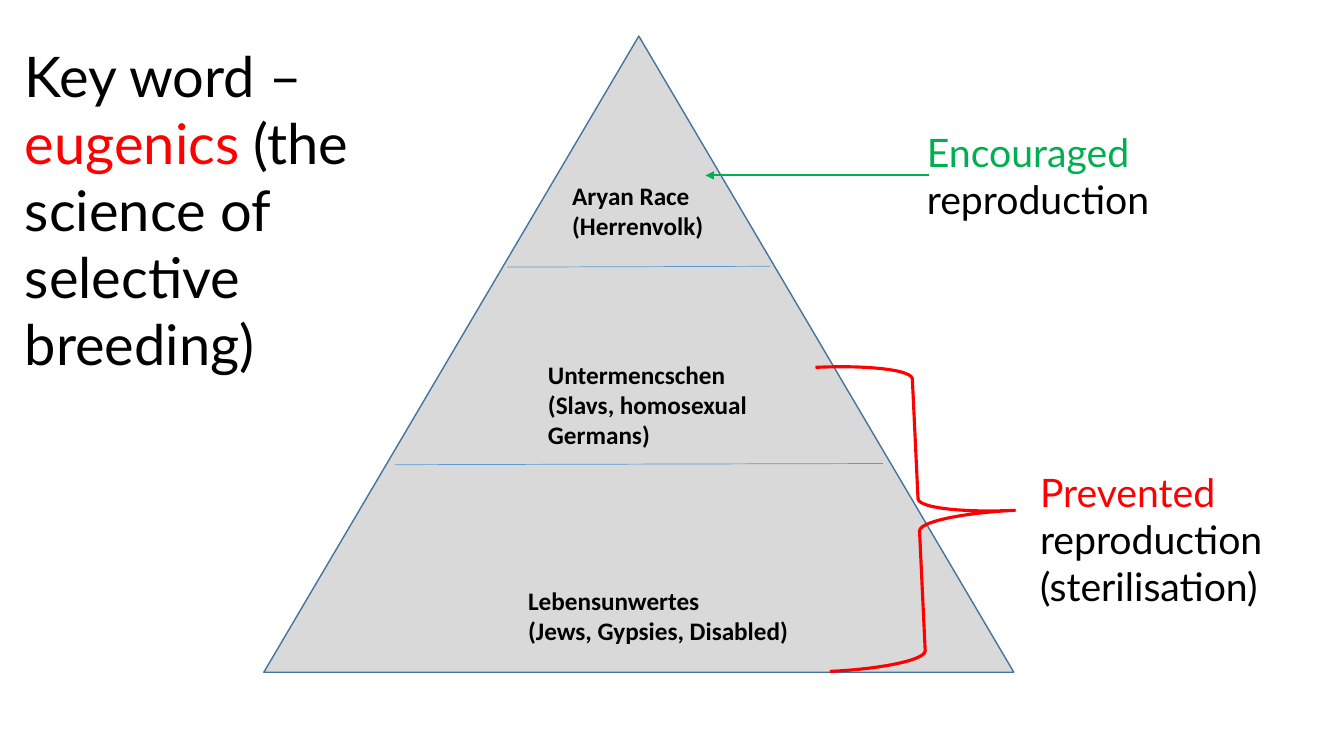
"""Build a slide with a three-tier pyramid, its labels and the key word eugenics."""
from typing import NamedTuple

from pptx import Presentation
from pptx import util as u
from pptx.dml.color import RGBColor
from pptx.enum import shapes, text
from pptx.oxml import parse_xml
from pptx.oxml.ns import nsdecls

BLACK, RED, GREEN = "000000", "FF0000", "00B050"
GREY, NAVY, BLUE = "D9D9D9", "43739E", "5B9BD5"


class Box(NamedTuple):
    left: float
    top: float
    width: float
    height: float


class Run(NamedTuple):
    words: str
    color: str = BLACK


class Label(NamedTuple):
    box: Box
    size: int
    paragraphs: list[list[Run]]
    font: str = "Lato"
    bold: bool = False


class Line(NamedTuple):
    start: tuple[float, float]
    end: tuple[float, float]
    color: str = BLUE
    width: float = 0.5
    arrow: bool = False


def tier(box: Box, name: str, members: str) -> Label:
    return Label(box, 18, [[Run(name)], [Run(members)]], "Calibri", True)


LABELS = [
    Label(Box(23.11, 3.1, 9.27, 2.64), 28,
          [[Run("Encouraged ", GREEN), Run("reproduction")]]),
    Label(Box(25.96, 11.68, 9.27, 3.84), 28,
          [[Run("Prevented ", RED), Run("reproduction")], [Run("(sterilisation)")]]),
    tier(Box(14.17, 4.42, 4.24, 1.8), "Aryan Race", "(Herrenvolk)"),
    tier(Box(13.56, 8.92, 6.99, 2.57), "Untermencschen", "(Slavs, homosexual Germans)"),
    tier(Box(13.06, 14.63, 7.42, 1.8), "Lebensunwertes", "(Jews, Gypsies, Disabled)"),
    Label(Box(0.38, 0.91, 11.25, 5.38), 40,
          [[Run("Key word – "), Run("eugenics", RED),
            Run(" (the science of selective breeding)")]]),
]

LINES = [
    Line((12.78, 6.73), (19.41, 6.71)),
    Line((9.96, 11.71), (22.25, 11.68)),
    Line((23.42, 4.42), (17.78, 4.42), GREEN, 1.5, True),
]


def rgb(color: str) -> RGBColor:
    return RGBColor.from_string(color)


def add_outline(slide, kind, box: Box, color: str, width: float):
    shape = slide.shapes.add_shape(kind, *map(u.Cm, box))
    shape.shadow.inherit = False
    shape.line.color.rgb = rgb(color)
    shape.line.width = u.Pt(width)
    return shape


def add_label(slide, label: Label) -> None:
    frame = slide.shapes.add_textbox(*map(u.Cm, label.box)).text_frame
    frame.word_wrap = True
    frame.auto_size = text.MSO_AUTO_SIZE.SHAPE_TO_FIT_TEXT
    for index, runs in enumerate(label.paragraphs):
        paragraph = frame.add_paragraph() if index else frame.paragraphs[0]
        paragraph.font.name = label.font
        paragraph.font.size = u.Pt(label.size)
        paragraph.font.bold = label.bold
        for words, color in runs:
            run = paragraph.add_run()
            run.text = words
            run.font.color.rgb = rgb(color)


def add_line(slide, line: Line) -> None:
    connector = slide.shapes.add_connector(
        shapes.MSO_CONNECTOR.STRAIGHT, *map(u.Cm, line.start + line.end))
    connector.line.color.rgb = rgb(line.color)
    connector.line.width = u.Pt(line.width)
    if line.arrow:
        connector.line._get_or_add_ln().append(
            parse_xml(f'<a:tailEnd {nsdecls("a")} type="triangle"/>'))
    connector._element.spPr.append(parse_xml(f'<a:effectLst {nsdecls("a")}/>'))


def main() -> None:
    presentation = Presentation()
    presentation.slide_width, presentation.slide_height = u.Cm(33.87), u.Cm(19.05)
    slide = presentation.slides.add_slide(presentation.slide_layouts[6])

    pyramid = add_outline(slide, shapes.MSO_SHAPE.ISOSCELES_TRIANGLE,
                          Box(6.65, 0.91, 18.9, 16.03), NAVY, 1)
    pyramid.fill.solid()
    pyramid.fill.fore_color.rgb = rgb(GREY)

    for label in LABELS:
        add_label(slide, label)

    brace = add_outline(slide, shapes.MSO_SHAPE.RIGHT_BRACE,
                        Box(20.73, 9.14, 4.85, 7.67), RED, 2.25)
    brace.fill.background()
    brace.rotation = 357.3

    for line in LINES:
        add_line(slide, line)

    presentation.save("out.pptx")


if __name__ == "__main__":
    main()
